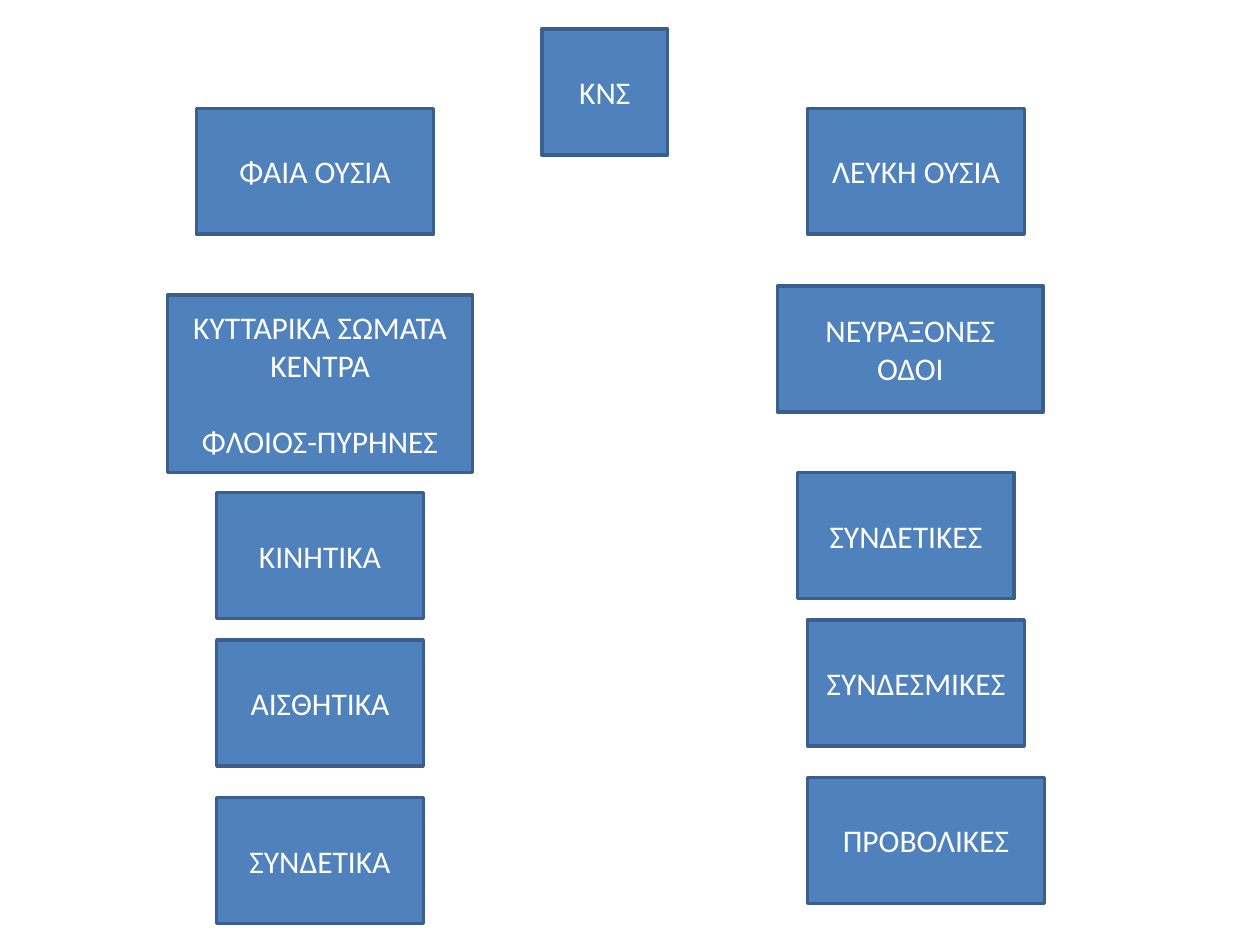
from pptx import Presentation
from pptx.dml.color import RGBColor
from pptx.enum.shapes import MSO_SHAPE
from pptx.enum.text import MSO_ANCHOR, PP_ALIGN
from pptx.util import Inches, Pt

COLORS = {"fill": "4F81BD", "line": "3A5F8C", "text": "FFFFFF"}
BOX_HEIGHT = 1

# Each box: horizontal offset, vertical offset, width, height, paragraphs
GREY_MATTER = [
    (0.23, 0, 1.88, BOX_HEIGHT, ["ΦΑΙΑ ΟΥΣΙΑ"]),
    (0, 1.48, 2.42, 1.41, ["ΚΥΤΤΑΡΙΚΑ ΣΩΜΑΤΑ", "ΚΕΝΤΡΑ", "ΦΛΟΙΟΣ-ΠΥΡΗΝΕΣ"]),
    (0.39, 3.05, 1.64, BOX_HEIGHT, ["ΚΙΝΗΤΙΚΑ"]),
    (0.39, 4.22, 1.64, BOX_HEIGHT, ["ΑΙΣΘΗΤΙΚΑ"]),
    (0.39, 5.47, 1.64, BOX_HEIGHT, ["ΣΥΝΔΕΤΙΚΑ"]),
]
WHITE_MATTER = [
    (0.24, 0, 1.72, BOX_HEIGHT, ["ΛΕΥΚΗ ΟΥΣΙΑ"]),
    (0, 1.41, 2.11, BOX_HEIGHT, ["ΝΕΥΡΑΞΟΝΕΣ ΟΔΟΙ"]),
    (0.16, 2.89, 1.72, BOX_HEIGHT, ["ΣΥΝΔΕΤΙΚΕΣ"]),
    (0.24, 4.06, 1.72, BOX_HEIGHT, ["ΣΥΝΔΕΣΜΙΚΕΣ"]),
    (0.24, 5.31, 1.88, BOX_HEIGHT, ["ΠΡΟΒΟΛΙΚΕΣ"]),
]


def color(name):
    return RGBColor.from_string(COLORS[name])


def add_box(s, left, top, width, height, lines):
    sp = s.shapes.add_shape(MSO_SHAPE.RECTANGLE, Inches(left), Inches(top),
                            Inches(width), Inches(height))
    sp.shadow.inherit = False
    sp.fill.solid()
    sp.fill.fore_color.rgb = color("fill")
    sp.line.color.rgb = color("line")
    sp.line.width = Pt(2)
    tf = sp.text_frame
    tf.word_wrap = True
    tf.vertical_anchor = MSO_ANCHOR.MIDDLE
    tf.text = "\n".join(lines)
    for p in tf.paragraphs:
        p.alignment = PP_ALIGN.CENTER
        p.font.name = "Calibri"
        p.font.size = Pt(18)
        p.font.color.rgb = color("text")
    return sp


def add_column(s, left, top, boxes):
    return [add_box(s, left + dx, top + dy, width, height, lines)
            for dx, dy, width, height, lines in boxes]


def main():
    prs = Presentation()
    prs.slide_width, prs.slide_height = Inches(10), Inches(7.5)
    s = prs.slides.add_slide(prs.slide_layouts[6])

    # Root of the diagram
    add_box(s, 4.3, 0.23, 1, BOX_HEIGHT, ["ΚΝΣ"])

    # Grey matter, with a one-line gap before cortex and nuclei
    grey = add_column(s, 1.33, 0.86, GREY_MATTER)
    grey[1].text_frame.paragraphs[-1].space_before = Pt(22)

    # White matter
    add_column(s, 6.17, 0.86, WHITE_MATTER)

    prs.save("out.pptx")


if __name__ == "__main__":
    main()
